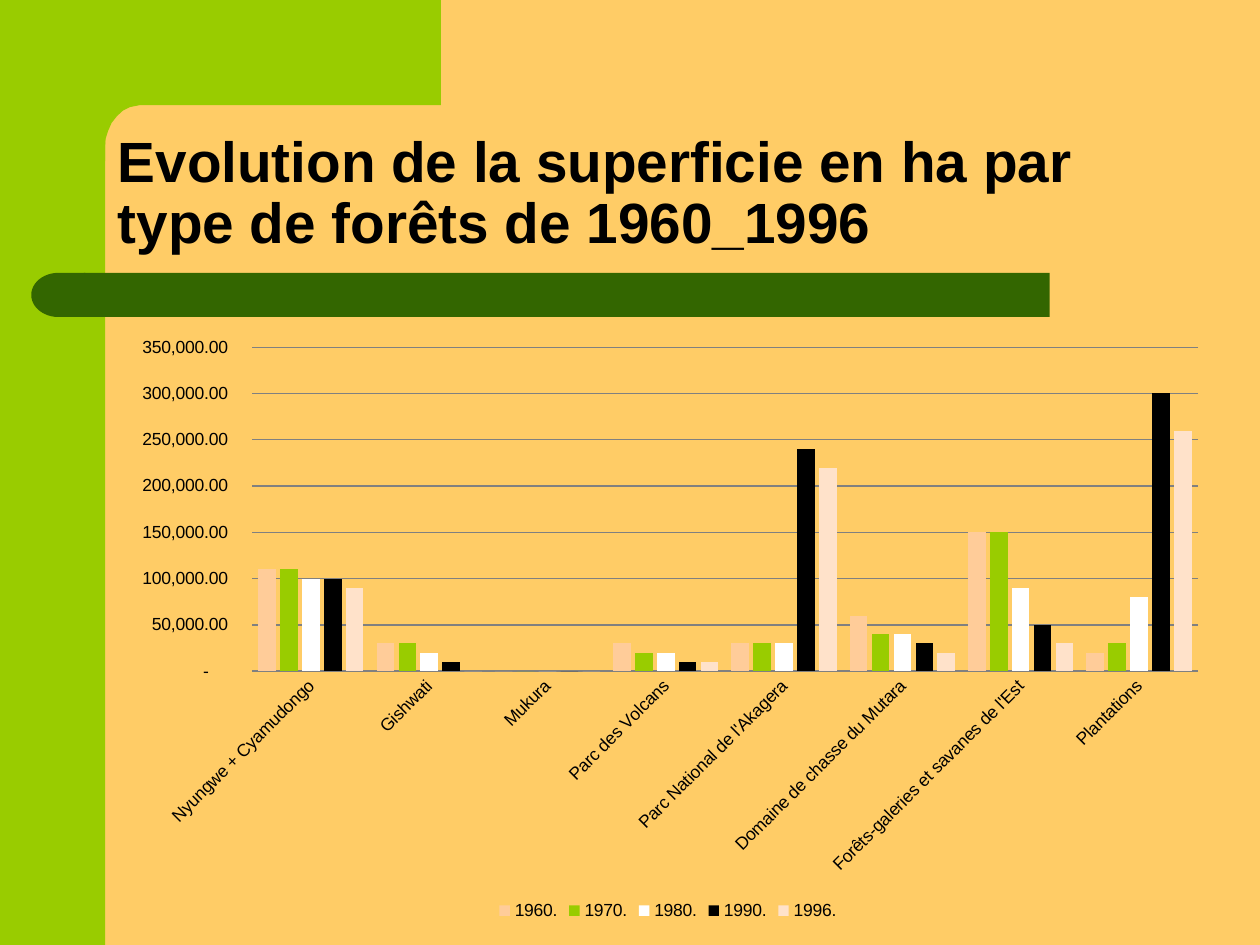
from pptx import Presentation
from pptx.chart.data import CategoryChartData
from pptx.dml.color import RGBColor
from pptx.enum.chart import XL_CHART_TYPE, XL_LEGEND_POSITION, XL_TICK_MARK
from pptx.enum.shapes import MSO_SHAPE
from pptx.enum.text import MSO_ANCHOR, MSO_AUTO_SIZE, PP_ALIGN
from pptx.util import Cm, Pt

RECTANGLE, DELAY = MSO_SHAPE.RECTANGLE, MSO_SHAPE.FLOWCHART_DELAY
COLUMNS = XL_CHART_TYPE.COLUMN_CLUSTERED
LEGEND_BOTTOM, NO_TICK = XL_LEGEND_POSITION.BOTTOM, XL_TICK_MARK.NONE
BOTTOM, LEFT, NO_FIT = MSO_ANCHOR.BOTTOM, PP_ALIGN.LEFT, MSO_AUTO_SIZE.NONE

SAND, LIME, FOREST, BLACK, GREY = "FFCC66", "99CC00", "336600", "000000", "808080"
FONT = "Arial"
TITLE = "Evolution de la superficie en ha par type de forêts de 1960_1996"
NUMBER_FORMAT = r'_-* #,##0.00\ _€_-;\-* #,##0.00\ _€_-;_-* "-"??\ _€_-;_-@_-'
CORNER_BAND = [
    (8.89, 0), (8.89, 2.12), (2.82, 2.12), (2.62, 2.16), (2.48, 2.23), (2.36, 2.34),
    (2.25, 2.48), (2.18, 2.64), (2.13, 2.8), (2.12, 2.95), (2.12, 3.25), (1.27, 3.25), (1.27, 0),
]
FORESTS = [
    "Nyungwe + Cyamudongo", "Gishwati", "Mukura", "Parc des Volcans",
    "Parc National de l'Akagera", "Domaine de chasse du Mutara",
    "Forêts-galeries et savanes de l'Est", "Plantations",
]
AREAS = [
    ("1960.", "FFCC99", (110000, 30000, 0, 30000, 30000, 60000, 150000, 20000)),
    ("1970.", LIME, (110000, 30000, 0, 20000, 30000, 40000, 150000, 30000)),
    ("1980.", "FFFFFF", (100000, 20000, 0, 20000, 30000, 40000, 90000, 80000)),
    ("1990.", BLACK, (100000, 10000, 0, 10000, 240000, 30000, 50000, 300000)),
    ("1996.", "FFE2CA", (90000, 0, 0, 10000, 220000, 20000, 30000, 260000)),
]


def apply(target, values):
    """Set every attribute named in values on the target."""
    for name, value in values.items():
        setattr(target, name, value)


def paint(fill, color):
    """Make a fill solid in the given hex colour."""
    fill.solid()
    fill.fore_color.rgb = RGBColor.from_string(color)


def style_font(font, size, bold=False):
    """Give a font the black text style."""
    apply(font, {"name": FONT, "size": Pt(size), "bold": bold})
    paint(font.fill, BLACK)


def finish(shape, color):
    """Leave a decoration with a flat fill only."""
    paint(shape.fill, color)
    shape.line.fill.background()
    shape.shadow.inherit = False


def add_block(page, kind, box, color, rotation=0):
    """Add a flat preset shape at a box in centimetres."""
    block = page.shapes.add_shape(kind, *map(Cm, box))
    block.rotation = rotation
    finish(block, color)


def add_outline(page, points, color):
    """Add a flat closed outline through points in centimetres."""
    start, *others = [(Cm(x), Cm(y)) for x, y in points]
    builder = page.shapes.build_freeform(*start)
    builder.add_line_segments(others)
    finish(builder.convert_to_shape(), color)


def add_title(page, box):
    """Place and format the title above the decorations."""
    title = page.shapes.title
    apply(title, dict(zip(("left", "top", "width", "height"), map(Cm, box))))
    frame = title.text_frame
    apply(frame, {"text": TITLE, "word_wrap": True, "auto_size": NO_FIT, "vertical_anchor": BOTTOM})
    para = frame.paragraphs[0]
    apply(para, {"alignment": LEFT, "line_spacing": 0.9})
    style_font(para.runs[0].font, 32.4, True)
    title.element.getparent().append(title.element)


def style_axes(chart):
    """Format both axes and slant the forest names."""
    names, values = chart.category_axis, chart.value_axis
    for axis in (names, values):
        apply(axis, {"major_tick_mark": NO_TICK, "minor_tick_mark": NO_TICK})
        style_font(axis.tick_labels.font, 10)
    apply(values, {"minimum_scale": 0, "maximum_scale": 350000, "major_unit": 50000,
                   "has_major_gridlines": True})
    apply(values.tick_labels, {"number_format": NUMBER_FORMAT, "number_format_is_linked": False})
    values.format.line.fill.background()
    for line in (names.format.line, values.major_gridlines.format.line):
        paint(line.fill, GREY)
        line.width = Pt(0.75)
    chart.element.xpath(".//c:catAx/c:txPr/a:bodyPr")[0].set("rot", "-2700000")


def add_area_chart(page, box):
    """Add the clustered columns of forest area by year."""
    data = CategoryChartData(number_format=NUMBER_FORMAT)
    data.categories = FORESTS
    for year, _, areas in AREAS:
        data.add_series(year, areas)
    chart = page.shapes.add_chart(COLUMNS, *map(Cm, box), data).chart
    apply(chart, {"has_title": False, "has_legend": True})
    style_font(chart.font, 10)
    apply(chart.legend, {"position": LEGEND_BOTTOM, "include_in_layout": False})
    style_font(chart.legend.font, 10)
    plot = chart.plots[0]
    apply(plot, {"gap_width": 75, "overlap": -25, "vary_by_categories": False})
    for series, (_, color, _) in zip(plot.series, AREAS):
        series.invert_if_negative = False
        paint(series.format.fill, color)
    style_axes(chart)


def main():
    """Build the slide and save the deck."""
    deck = Presentation()
    apply(deck, {"slide_width": Cm(25.4), "slide_height": Cm(19.05)})
    page = deck.slides.add_slide(deck.slide_layouts[5])
    paint(page.background.fill, SAND)
    add_block(page, RECTANGLE, (0, 0, 2.12, 19.05), LIME)
    add_outline(page, CORNER_BAND, LIME)
    add_block(page, RECTANGLE, (1.69, 5.5, 19.47, 0.89), FOREST)
    add_block(page, DELAY, (0.63, 5.5, 1.09, 0.89), FOREST, rotation=180)
    add_title(page, (2.12, 2.12, 22.01, 3.17))
    add_area_chart(page, (2.33, 6.56, 22.27, 12.1))
    deck.save("out.pptx")


if __name__ == "__main__":
    main()
